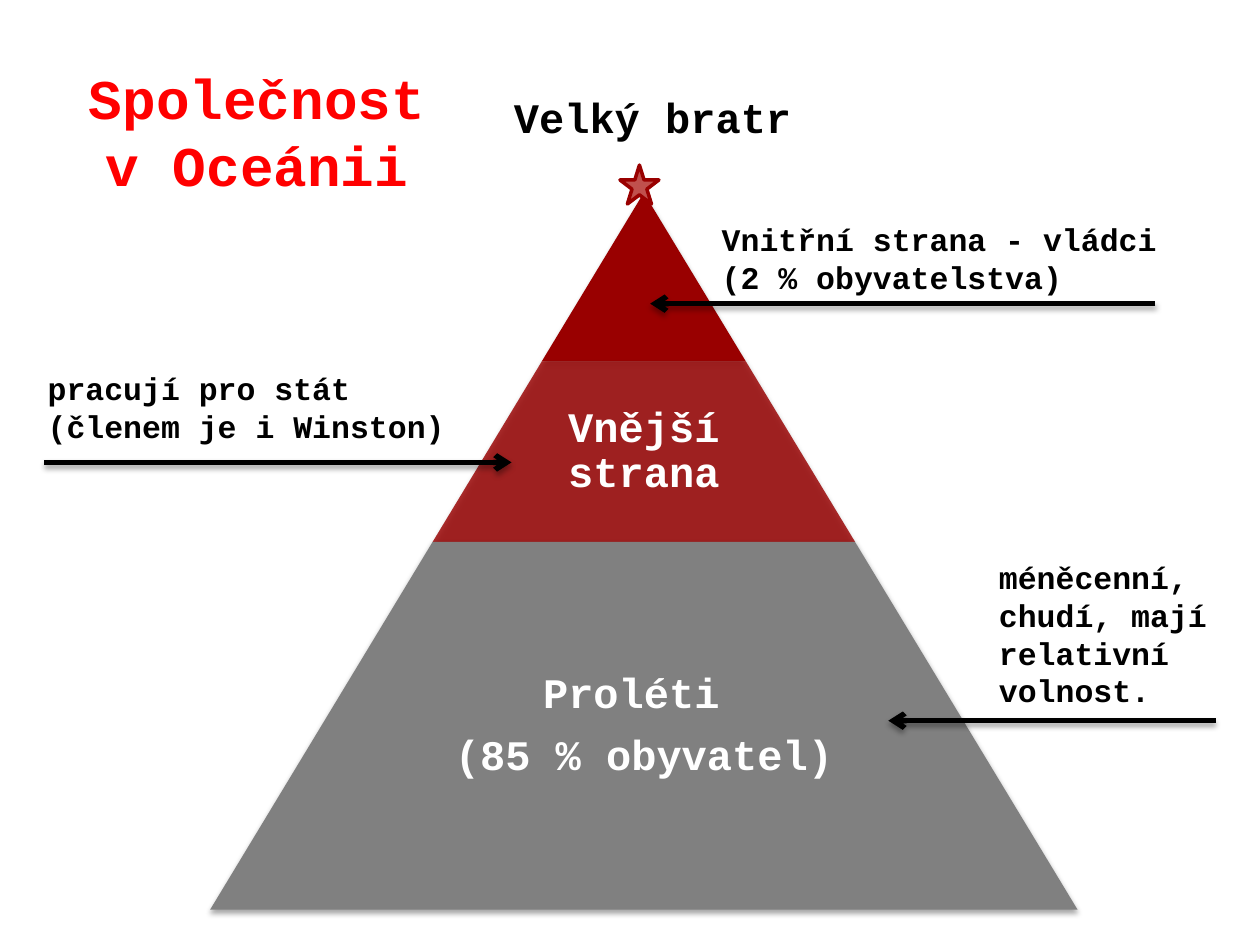
"""Build a slide with the social pyramid of Oceania."""
from lxml.etree import SubElement
from pptx import Presentation
from pptx.dml.color import RGBColor
from pptx.enum.shapes import MSO_CONNECTOR, MSO_SHAPE
from pptx.enum.text import MSO_ANCHOR, MSO_AUTO_SIZE, PP_ALIGN
from pptx.oxml.ns import qn
from pptx.util import Inches, Pt

FONT = "Courier New"
BLACK, WHITE, RED, DARK_RED, GREY = "000000", "FFFFFF", "FF0000", "990000", "808080"

TITLE = "Společnost v Oceánii"
TITLE_AREA = (0.5, 0.52, 3.08, 1.03)

APEX_X, APEX_Y, SLOPE = 5.11, 1.53, 0.605
LABEL_SHARE = 0.65
# height, colour, opacity in percent, label paragraphs
TIERS = [
    (1.34, DARK_RED, 100, []),
    (1.43, DARK_RED, 82, ["Vnější strana"]),
    (2.92, GREY, 100, ["Proléti ", "(85 % obyvatel)"]),
]
STAR_AREA = (4.92, 1.31, 0.31, 0.31)

# area, size, paragraphs
CAPTIONS = [
    ((3.98, 0.68, 2.52, 0.5), 24, ["Velký bratr"]),
    ((5.63, 1.7, 3.94, 0.71), 18, ["Vnitřní strana - vládci", "(2 % obyvatelstva)"]),
    ((0.28, 2.88, 3.46, 0.71), 18, ["pracují pro stát", "(členem je i Winston)"]),
    ((7.83, 4.38, 1.93, 1.31), 18, ["méněcenní, chudí, mají relativní volnost."]),
]
# start x, end x, y
ARROWS = [(9.17, 5.16, 2.41), (0.35, 4.06, 3.67), (9.65, 7.05, 5.72)]


def inches(values):
    return [Inches(value) for value in values]


def colour(target, value):
    target.rgb = RGBColor.from_string(value)


def add_alpha(colour_element, percent):
    SubElement(colour_element, qn("a:alpha"), val=str(percent * 1000))


def cast_shadow(shape):
    properties = shape._element.spPr
    for old in properties.findall(qn("a:effectLst")):
        properties.remove(old)
    effects = SubElement(properties, qn("a:effectLst"))
    shadow = SubElement(effects, qn("a:outerShdw"), blurRad=str(Pt(3.1)),
                        dist=str(Pt(1.8)), dir="5400000", rotWithShape="0")
    add_alpha(SubElement(shadow, qn("a:srgbClr"), val=BLACK), 35)


def write(frame, paragraphs, size, text_colour, align=None):
    frame.word_wrap = True
    for index, text in enumerate(paragraphs):
        paragraph = frame.paragraphs[0] if index == 0 else frame.add_paragraph()
        paragraph.alignment = align
        run = paragraph.add_run()
        run.text = text
        run.font.name, run.font.size, run.font.bold = FONT, Pt(size), True
        colour(run.font.color, text_colour)


def add_solid(slide, preset, area, fill):
    solid = slide.shapes.add_shape(preset, *inches(area))
    solid.shadow.inherit = False
    solid.fill.solid()
    colour(solid.fill.fore_color, fill)
    return solid


def add_tier(slide, top, height, fill, opacity):
    width = 2 * SLOPE * (top + height - APEX_Y)
    tier = add_solid(slide, MSO_SHAPE.TRAPEZOID, (APEX_X - width / 2, top, width, height), fill)
    tier.adjustments[0] = SLOPE
    tier.line.fill.background()
    if opacity < 100:
        add_alpha(tier._element.spPr.find(qn("a:solidFill"))[0], opacity)
    cast_shadow(tier)
    return width


def add_tier_label(slide, top, height, width, paragraphs):
    area = (APEX_X - width / 2, top, width, height)
    frame = slide.shapes.add_textbox(*inches(area)).text_frame
    frame.margin_left = frame.margin_right = Inches(0.03)
    frame.margin_top = frame.margin_bottom = Inches(0.03)
    frame.vertical_anchor = MSO_ANCHOR.MIDDLE
    write(frame, paragraphs, 24, WHITE, PP_ALIGN.CENTER)
    for paragraph in frame.paragraphs:
        paragraph.line_spacing = 0.9
        paragraph.space_after = Pt(9.5)


def add_arrow(slide, start, end, y):
    arrow = slide.shapes.add_connector(MSO_CONNECTOR.STRAIGHT, *inches((start, y, end, y)))
    arrow.line.width = Pt(3)
    colour(arrow.line.color, BLACK)
    SubElement(arrow.line._get_or_add_ln(), qn("a:tailEnd"), type="arrow")
    cast_shadow(arrow)


def main():
    presentation = Presentation()
    presentation.slide_width, presentation.slide_height = inches((10, 7.5))
    slide = presentation.slides.add_slide(presentation.slide_layouts[5])

    title = slide.shapes.title
    title.left, title.top, title.width, title.height = inches(TITLE_AREA)
    title.text_frame.auto_size = MSO_AUTO_SIZE.NONE
    title.text_frame.vertical_anchor = MSO_ANCHOR.MIDDLE
    write(title.text_frame, [TITLE], 32, RED, PP_ALIGN.CENTER)

    top = APEX_Y
    for height, fill, opacity, paragraphs in TIERS:
        width = add_tier(slide, top, height, fill, opacity)
        if paragraphs:
            add_tier_label(slide, top, height, width * LABEL_SHARE, paragraphs)
        top += height

    star = add_solid(slide, MSO_SHAPE.STAR_5_POINT, STAR_AREA, "C0504D")
    colour(star.line.color, DARK_RED)
    star.line.width = Pt(2)

    for area, size, paragraphs in CAPTIONS:
        frame = slide.shapes.add_textbox(*inches(area)).text_frame
        write(frame, paragraphs, size, BLACK)
        frame.auto_size = MSO_AUTO_SIZE.SHAPE_TO_FIT_TEXT
    for arrow in ARROWS:
        add_arrow(slide, *arrow)

    presentation.save("out.pptx")


if __name__ == "__main__":
    main()
